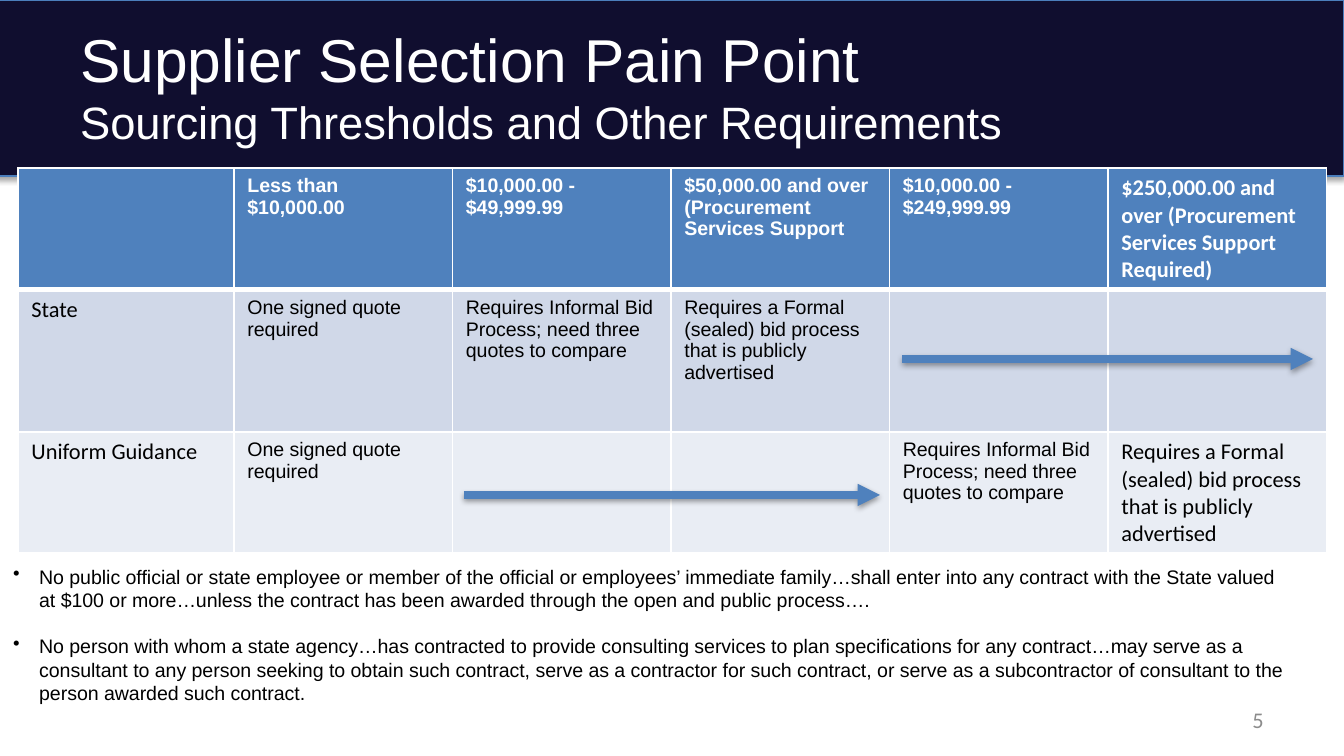
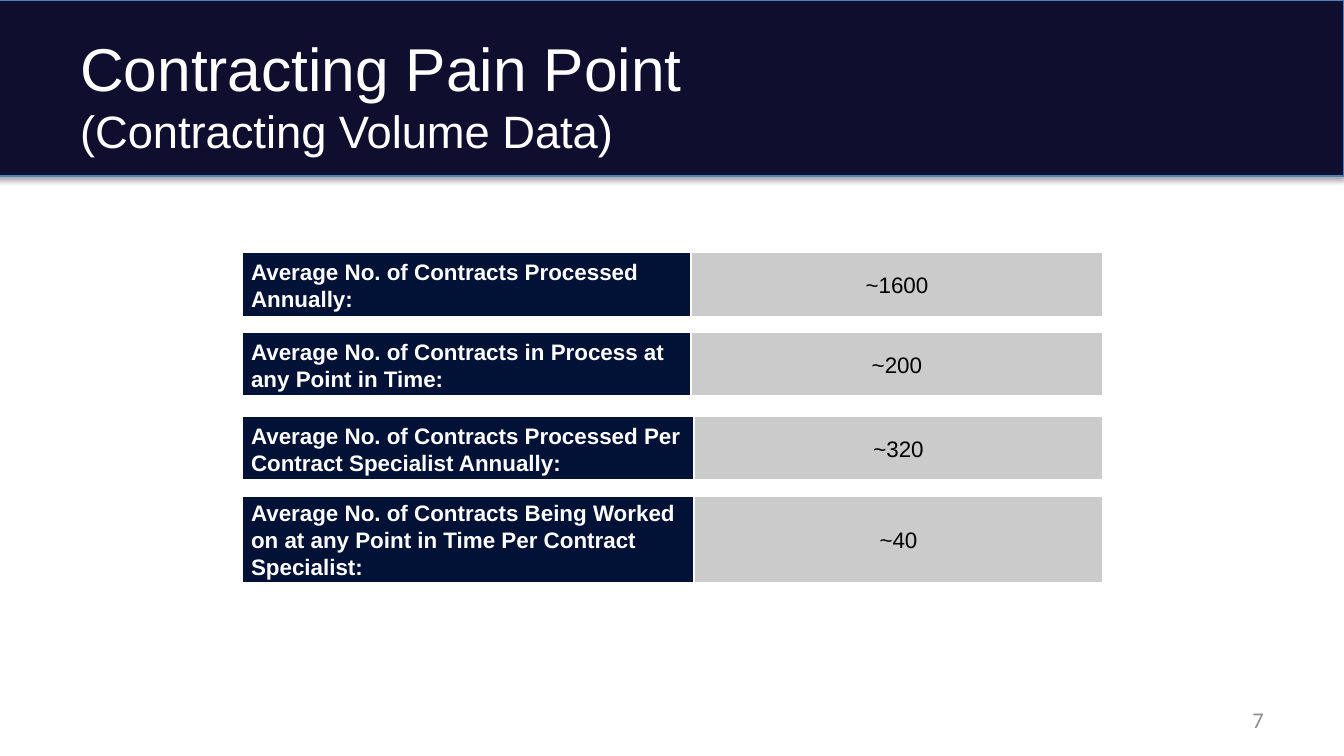
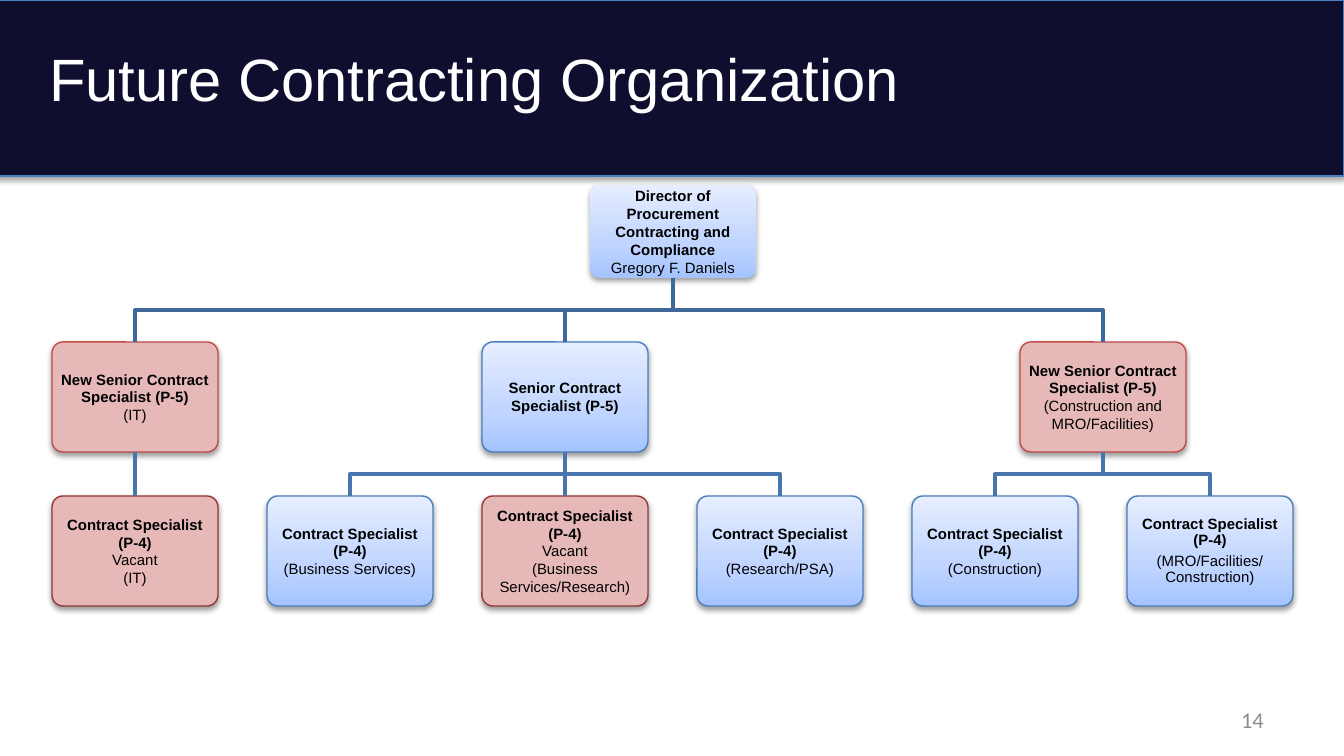
from copy import deepcopy

from lxml import etree
from pptx import Presentation
from pptx.dml.color import RGBColor
from pptx.enum import shapes, text
from pptx.oxml import ns
from pptx.util import Pt

PX = 914400 / 134.4
COLORS = {
    "band": "100E2F", "band_line": "4B7EBC", "white": "FFFFFF", "black": "000000",
    "page": "8C8C8C", "accent": "4F81BD", "state": "D0D8E8", "uniform": "E9EDF4",
    "label": "021236", "value": "CBCBCB", "new": "E6B9B8", "new_line": "BF4C48",
    "vacant_line": "953735", "upper_tie": "3F6797", "lower_tie": "4875AC",
}
CARD_GRADIENT = [(0, "A4C4FF"), (0.35, "BFD4FF"), (1, "E6EEFF")]
CENTER, LEFT, RIGHT = text.PP_ALIGN.CENTER, text.PP_ALIGN.LEFT, text.PP_ALIGN.RIGHT
MIDDLE, TOP = text.MSO_ANCHOR.MIDDLE, text.MSO_ANCHOR.TOP


def px(length):
    return round(length * PX)


def color(name):
    return RGBColor.from_string(COLORS[name])


def add_xml(parent, tag, **attributes):
    return etree.SubElement(parent, ns.qn(tag), attributes)


class Deck:
    def __init__(self):
        self.prs = Presentation()
        self.prs.slide_width, self.prs.slide_height = px(1344), px(756)
        self.slide = None

    def start(self, page, title_box, *title_lines):
        self.slide = self.prs.slides.add_slide(self.prs.slide_layouts[6])
        band = self.shape(shapes.MSO_SHAPE.RECTANGLE, (-5, 0, 1349, 176), "band", "band_line")
        self.shadow(band, 35, 1.8)
        heading = self.frame(title_box).paragraphs[0]
        self.style(heading, 32, "white")
        for index, (line, size) in enumerate(title_lines):
            if index:
                heading.add_line_break()
            run = heading.add_run()
            run.text = line
            run.font.size = Pt(size)
        number = self.frame((964, 700, 313, 40)).paragraphs[0]
        number.text = page
        self.style(number, 12, "page", face="Calibri", align=RIGHT)

    def style(self, paragraph, size, ink, bold=False, face="Arial", align=LEFT):
        paragraph.alignment = align
        font = paragraph.font
        font.name, font.size, font.bold = face, Pt(size), bold
        font.color.rgb = color(ink)

    def frame(self, box, anchor=MIDDLE):
        frame = self.slide.shapes.add_textbox(*map(px, box)).text_frame
        frame.word_wrap = True
        frame.vertical_anchor = anchor
        return frame

    def shape(self, kind, box, fill, line):
        shape = self.slide.shapes.add_shape(kind, *map(px, box))
        if fill:
            shape.fill.solid()
            shape.fill.fore_color.rgb = color(fill)
        else:
            shape.fill.gradient()
            shape.fill.gradient_angle = 90
            stops = shape._element.spPr.find(".//" + ns.qn("a:gsLst"))
            stops.insert(1, deepcopy(stops[0]))
            for stop, (position, tint) in zip(shape.fill.gradient_stops, CARD_GRADIENT):
                stop.position = position
                stop.color.rgb = RGBColor.from_string(tint)
        if line:
            self.stroke(shape, line, 0.75)
        else:
            shape.line.fill.background()
        return shape

    def stroke(self, item, ink, width):
        item.line.color.rgb = color(ink)
        item.line.width = Pt(width)

    def shadow(self, item, alpha=38, distance=1.6):
        effects = add_xml(item._element.spPr, "a:effectLst")
        outer = add_xml(effects, "a:outerShdw", blurRad=str(Pt(3.1)), dist=str(Pt(distance)),
                        dir="5400000", rotWithShape="0")
        ink = add_xml(outer, "a:srgbClr", val=COLORS["black"])
        add_xml(ink, "a:alpha", val=str(alpha * 1000))

    def connector(self, start, end, ink, width):
        line = self.slide.shapes.add_connector(
            shapes.MSO_CONNECTOR.STRAIGHT, *map(px, (*start, *end)))
        self.stroke(line, ink, width)
        return line

    def arrow(self, left, right, y):
        arrow = self.connector((left, y), (right, y), "accent", 4)
        add_xml(arrow.line._get_or_add_ln(), "a:tailEnd", type="triangle")
        self.shadow(arrow)

    def tie(self, upper, lower, ink):
        x1, x2 = (card.left + card.width // 2 for card in (upper, lower))
        y1, y2 = upper.top + upper.height, lower.top
        if x1 == x2:
            line = self.connector((x1 / PX, y1 / PX), (x2 / PX, y2 / PX), ink, 2)
            line.begin_connect(upper, 2)
            line.end_connect(lower, 0)
            add_xml(line._element.spPr, "a:effectLst")
            return
        bend = (y1 + y2) // 2
        builder = self.slide.shapes.build_freeform(x1, y1)
        builder.add_line_segments([(x1, bend), (x2, bend), (x2, y2)], close=False)
        elbow = builder.convert_to_shape()
        elbow.fill.background()
        self.stroke(elbow, ink, 2)
        elbow.shadow.inherit = False

    def card(self, column, top, height, title, *details, fill=None, line="band_line", tight=False):
        box = (round(52 + 215 * column), top, 166, height)
        card = self.shape(shapes.MSO_SHAPE.ROUNDED_RECTANGLE, box, fill, line)
        card.adjustments[0] = 0.1
        self.shadow(card)
        frame = card.text_frame
        frame.word_wrap = True
        frame.vertical_anchor = MIDDLE
        frame.margin_left = frame.margin_right = frame.margin_top = frame.margin_bottom = px(4)
        frame.text = "\n".join((title, *details))
        for index, paragraph in enumerate(frame.paragraphs):
            self.style(paragraph, 8, "black", bold=index == 0, align=CENTER)
            if tight:
                paragraph.line_spacing = 0.9
                paragraph.space_after = Pt(2.8)
        return card

    def table(self, left, top, widths, heights):
        table = self.slide.shapes.add_table(
            len(heights), len(widths), *map(px, (left, top, sum(widths), sum(heights)))).table
        table.first_row = table.horz_banding = False
        for column, width in zip(table.columns, widths):
            column.width = px(width)
        for row, height in zip(table.rows, heights):
            row.height = px(height)
        return table

    def cell(self, cell, words, fill, size, ink, bottom=1, anchor=TOP, **font):
        cell.fill.solid()
        cell.fill.fore_color.rgb = color(fill)
        cell.vertical_anchor = anchor
        cell.text = words
        self.style(cell.text_frame.paragraphs[0], size, ink, **font)
        properties = cell._tc.get_or_add_tcPr()
        for index, side in enumerate("LRTB"):
            border = add_xml(properties, "a:ln" + side, w=str(Pt(bottom if side == "B" else 1)))
            add_xml(add_xml(border, "a:solidFill"), "a:srgbClr", val=COLORS["white"])
            properties.insert(index, border)

    def bullets(self, box, size, gap, *items):
        frame = self.frame(box, TOP)
        frame.text = "\n".join(items)
        for index, paragraph in enumerate(frame.paragraphs):
            self.style(paragraph, size, "black")
            paragraph.space_before = Pt(gap if index else 0)
            properties = paragraph._p.get_or_add_pPr()
            properties.set("marL", str(px(26)))
            properties.set("indent", str(-px(26)))
            bullet = add_xml(properties, "a:buChar", char="•")
            properties.find(ns.qn("a:defRPr")).addprevious(bullet)


def thresholds(deck):
    deck.start("5", (67, 22, 1210, 126), ("Supplier Selection Pain Point", 32.4),
               ("Sourcing Thresholds and Other Requirements", 24.3))
    quote = "One signed quote required"
    informal = "Requires Informal Bid Process; need three quotes to compare"
    formal = "Requires a Formal (sealed) bid process that is publicly advertised"
    rows = [
        ("accent", ["", "Less than $10,000.00", "$10,000.00 - $49,999.99",
                    "$50,000.00 and over (Procurement Services Support",
                    "$10,000.00 - $249,999.99",
                    "$250,000.00 and over (Procurement Services Support Required)"]),
        ("state", ["State", quote, informal, formal, "", ""]),
        ("uniform", ["Uniform Guidance", quote, "", "", informal, formal]),
    ]
    table = deck.table(18, 168, [216] + [218.5] * 5, [122, 142, 121])
    for r, (fill, entries) in enumerate(rows):
        header = r == 0
        for c, words in enumerate(entries):
            size, face = (12, "Calibri") if c in (0, 5) else (10.5, "Arial")
            deck.cell(table.cell(r, c), words, fill, size, "white" if header else "black",
                      bottom=3 if header else 1, bold=header, face=face)
    deck.arrow(902, 1313, 359)
    deck.arrow(464, 880, 495)
    deck.bullets(
        (0, 558, 1309, 196), 10.5, 12,
        "No public official or state employee or member of the official or employees’ immediate "
        "family…shall enter into any contract with the State valued at $100 or more…unless the "
        "contract has been awarded through the open and public process….",
        "No person with whom a state agency…has contracted to provide consulting services to plan "
        "specifications for any contract…may serve as a consultant to any person seeking to obtain "
        "such contract, serve as a contractor for such contract, or serve as a subcontractor of "
        "consultant to the person awarded such contract.")


def volumes(deck):
    deck.start("7", (67, 31, 1210, 126), ("Contracting Pain Point", 32.4),
               ("(Contracting Volume Data)", 24.3))
    measures = [
        (252, 66, 449, "Average No. of Contracts Processed Annually:", "~1600"),
        (332, 66, 449, "Average No. of Contracts in Process at any Point in Time:", "~200"),
        (416, 66, 452,
         "Average No. of Contracts Processed Per Contract Specialist Annually:", "~320"),
        (496, 88, 452, "Average No. of Contracts Being Worked on at any Point in Time "
                       "Per Contract Specialist:", "~40"),
    ]
    for top, height, split, measure, amount in measures:
        table = deck.table(242, top, [split, 861 - split], [height])
        label, value = table.cell(0, 0), table.cell(0, 1)
        deck.cell(label, measure, "label", 12, "white", bottom=3, anchor=MIDDLE, bold=True)
        deck.cell(value, amount, "value", 12, "black", bottom=3, anchor=MIDDLE, align=CENTER)
        for cell in (label, value):
            cell.margin_left = cell.margin_right = px(9)
            cell.margin_top = cell.margin_bottom = 0
            cell.text_frame.paragraphs[0].line_spacing = 1.07


def organization(deck):
    deck.start("14", (36, 28, 1270, 100), ("Future Contracting Organization", 32))
    new = {"fill": "new", "line": "new_line"}
    vacant = {"fill": "new", "line": "vacant_line"}
    senior_title, title = "Senior Contract Specialist (P-5)", "Contract Specialist (P-4)"
    teams = [
        (0, ["New " + senior_title, "(IT)"], new, [(0, ["Vacant", "(IT)"], vacant)]),
        (2, [senior_title], {}, [
            (1, ["(Business Services)"], {}),
            (2, ["Vacant", "(Business Services/Research)"], vacant),
            (3, ["(Research/PSA)"], {})]),
        (4.5, ["New " + senior_title, "(Construction and MRO/Facilities)"], new, [
            (4, ["(Construction)"], {}),
            (5, ["(MRO/Facilities/ Construction)"], {"tight": True})]),
    ]
    director = deck.card(2.5, 185, 93, "Director of Procurement Contracting and Compliance",
                         "Gregory F. Daniels", line=None)
    for column, lines, look, members in teams:
        senior = deck.card(column, 342, 110, *lines, **look)
        deck.tie(director, senior, "upper_tie")
        for place, details, member_look in members:
            specialist = deck.card(place, 496, 110, title, *details, **member_look)
            deck.tie(senior, specialist, "lower_tie")


def main():
    deck = Deck()
    thresholds(deck)
    volumes(deck)
    organization(deck)
    deck.prs.save("out.pptx")


if __name__ == "__main__":
    main()
